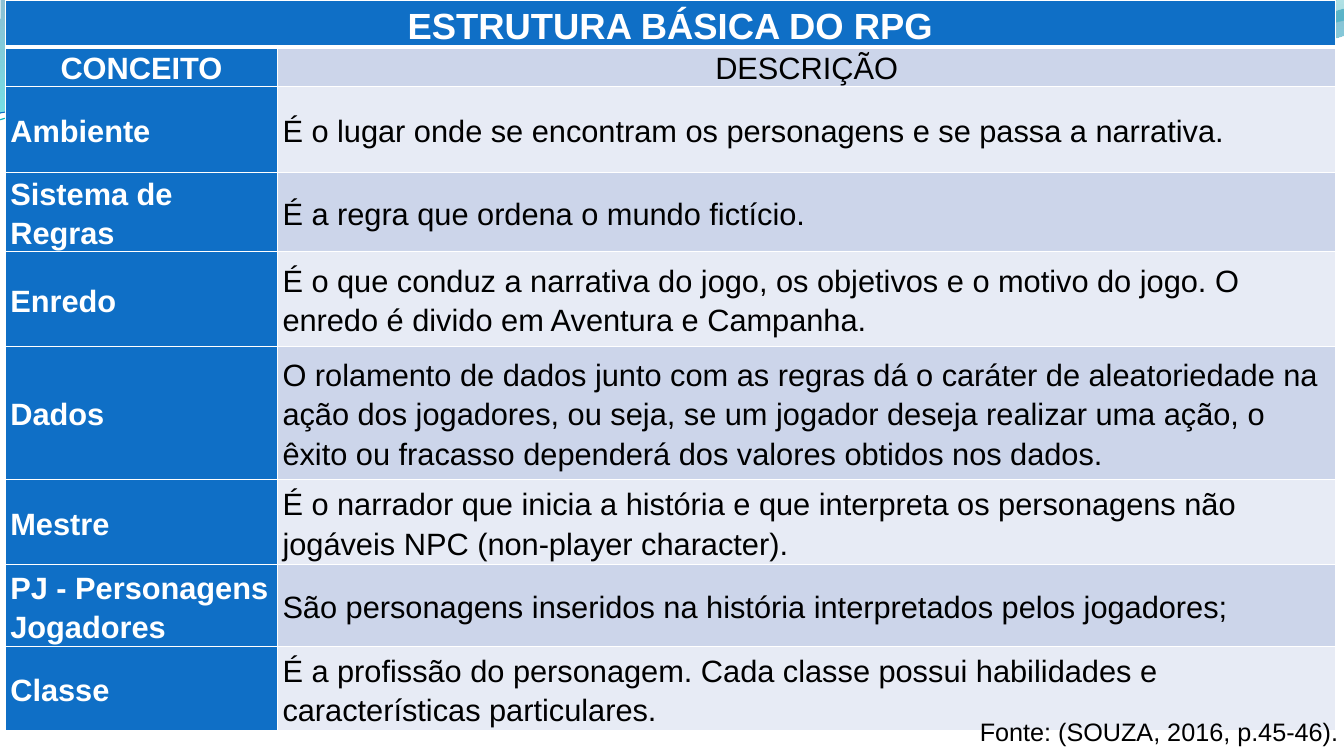
from lxml import etree
from pptx import Presentation
from pptx.dml.color import RGBColor
from pptx.enum.text import MSO_ANCHOR, MSO_AUTO_SIZE, PP_ALIGN
from pptx.oxml.ns import qn
from pptx.util import Pt

MIDDLE, BOTTOM = MSO_ANCHOR.MIDDLE, MSO_ANCHOR.BOTTOM
LEFT, CENTER = PP_ALIGN.LEFT, PP_ALIGN.CENTER
GROW = MSO_AUTO_SIZE.SHAPE_TO_FIT_TEXT
COLORS = {
    "blue": "0F6FC6", "band": "CCD5EA", "pale": "E7EBF5",
    "white": "FFFFFF", "black": "000000", "aqua": "0AB8BF",
    "deep": "0074A1", "cyan": "00C6CF", "teal": "00A1A9", "sky": "008BBF",
}
RGB = {name: RGBColor.from_string(code) for name, code in COLORS.items()}

deck = Presentation()
deck.slide_width, deck.slide_height = Pt(960), Pt(540)
slide = deck.slides.add_slide(deck.slide_layouts[6])


def trace(start, parts, close):
    spots = [(x * 100, y * 100) for part in [[start], *parts] for x, y in part]
    build = slide.shapes.build_freeform(*spots[0], scale=Pt(1) / 100)
    build.add_line_segments(spots[1:], close=close)
    shape = build.convert_to_shape()
    shape.shadow.inherit = False
    edges = iter(list(shape.element.spPr.iter(qn("a:lnTo"))))
    for part in parts:
        group = [next(edges) for _ in part]
        if len(group) == 3:
            curve = etree.Element(qn("a:cubicBezTo"))
            group[0].addprevious(curve)
            for edge in group:
                curve.append(edge[0])
                edge.getparent().remove(edge)
    return shape


def write(para, text, align, look):
    para.alignment = align
    run = para.add_run()
    run.text = text
    run.font.name = "Arial"
    run.font.color.rgb = RGB[look["color"]]
    for key in ("size", "bold"):
        setattr(run.font, key, look[key])


waves = [
    ((0, 0), [
        [(422.6, -0.7)],
        [(456.5, 12.2), (636.5, 45.4), (727.9, 45.4)],
        [(818.6, 45.4), (919.4, 18.7), (959.8, 6.5)],
        [(960.5, 25.9)],
        [(943.9, 31.7), (834.5, 54.7), (715.7, 54)],
        [(596.9, 54), (366.5, 20.2), (247, 24.5)],
        [(123.8, 25.9), (43.9, 59.8), (-0.7, 81.4)],
    ], [("deep", 0, 45), ("cyan", 1, 55)]),
    ((460.1, -0.7), [
        [(488.9, 7.9), (654.5, 44.6), (738, 46.8)],
        [(820.8, 49.7), (923, 23), (959.8, 15.1)],
        [(959.8, 0)],
    ], [("teal", 0, 30), ("sky", 0.8, 45)]),
]
for start, parts, stops in waves:
    wave = trace(start, parts, True)
    wave.line.fill.background()
    wave.fill.gradient()
    wave.fill.gradient_angle = 270
    for stop, (name, place, _) in zip(wave.fill.gradient_stops, stops):
        stop.color.rgb = RGB[name]
        stop.position = place
    tints = wave.element.spPr.iter(qn("a:srgbClr"))
    for tint, (_, _, alpha) in zip(tints, stops):
        etree.SubElement(tint, qn("a:alpha"), val=str(alpha * 1000))

lines = [
    ((-0.7, 85.7), [
        [(46.1, 72.7), (151.9, 44.6), (265.7, 39.6)],
        [(379.4, 34.6), (568.1, 62.6), (684, 54.7)],
        [(799.2, 47.5), (900.7, 5.8), (958.3, -7.2)],
    ], "aqua", 0.85),
    ((0, 80.6), [
        [(45.4, 74.2), (157, 47.5), (272.2, 42.5)],
        [(386.6, 38.2), (573.1, 59), (687.6, 51.8)],
        [(802.1, 44.6), (903.6, 10.1), (959.8, -1.4)],
    ], "blue", 0.75),
]
for start, parts, name, width in lines:
    line = trace(start, parts, False)
    line.fill.background()
    line.line.color.rgb = RGB[name]
    line.line.width = Pt(width)

rows = [
    (33.1, "ESTRUTURA BÁSICA DO RPG", ""),
    (28.1, "CONCEITO", "DESCRIÇÃO"),
    (61.2, "Ambiente", "É o lugar onde se encontram os personagens e se passa a narrativa."),
    (37.4, "Sistema de Regras", "É a regra que ordena o mundo fictício."),
    (67.7, "Enredo", "É o que conduz a narrativa do jogo, os objetivos e o motivo do jogo. "
     "O enredo é divido em Aventura e Campanha."),
    (95, "Dados", "O rolamento de dados junto com as regras dá o caráter de aleatoriedade "
     "na ação dos jogadores, ou seja, se um jogador deseja realizar uma ação, o êxito ou "
     "fracasso dependerá dos valores obtidos nos dados."),
    (61.2, "Mestre", "É o narrador que inicia a história e que interpreta os personagens não "
     "jogáveis NPC (non-player character)."),
    (58.3, "PJ - Personagens Jogadores",
     "São personagens inseridos na história interpretados pelos jogadores;"),
    (60.5, "Classe", "É a profissão do personagem. Cada classe possui habilidades e "
     "características particulares."),
]
looks = {
    "title": {"size": Pt(26), "bold": True, "color": "white"},
    "head": {"size": Pt(22), "bold": True, "color": "white"},
    "body": {"size": Pt(22), "bold": False, "color": "black"},
    "note": {"size": Pt(18), "bold": False, "color": "black"},
}
insets = {
    "margin_left": Pt(3.6), "margin_right": Pt(3.6),
    "margin_top": Pt(0), "margin_bottom": Pt(0),
}

frame = slide.shapes.add_table(len(rows), 2, Pt(3.8), Pt(0), Pt(950.4), Pt(533.5))
grid = frame.table
for col, width in zip(grid.columns, (194.4, 756)):
    col.width = Pt(width)
grid.cell(0, 0).merge(grid.cell(0, 1))

for r, (height, *texts) in enumerate(rows):
    grid.rows[r].height = Pt(height)
    for c, text in enumerate(texts):
        cell = grid.cell(r, c)
        for key, value in insets.items():
            setattr(cell, key, value)
        cell.vertical_anchor = BOTTOM if r < 2 else MIDDLE
        shade = "blue" if c == 0 or r == 0 else "band" if r % 2 else "pale"
        cell.fill.solid()
        cell.fill.fore_color.rgb = RGB[shade]
        props = cell._tc.get_or_add_tcPr()
        for spot, side in enumerate("LRTB"):
            thick = 3 if (r, side) in ((0, "B"), (1, "T")) else 1
            edge = etree.Element(qn(f"a:ln{side}"), w=str(Pt(thick)))
            paint = etree.SubElement(edge, qn("a:solidFill"))
            etree.SubElement(paint, qn("a:srgbClr"), val=COLORS["white"])
            props.insert(spot, edge)
        if text:
            para = cell.text_frame.paragraphs[0]
            para.line_spacing = 1.15
            kind = "title" if r == 0 else "body" if c else "head"
            write(para, text, CENTER if r < 2 else LEFT, looks[kind])
frame.height = Pt(533.5)

note = slide.shapes.add_textbox(Pt(692.8), Pt(508.3), Pt(278), Pt(29))
note.text_frame.word_wrap = False
note.text_frame.auto_size = GROW
write(note.text_frame.paragraphs[0], "Fonte: (SOUZA, 2016, p.45-46).", LEFT, looks["note"])

deck.save("out.pptx")
